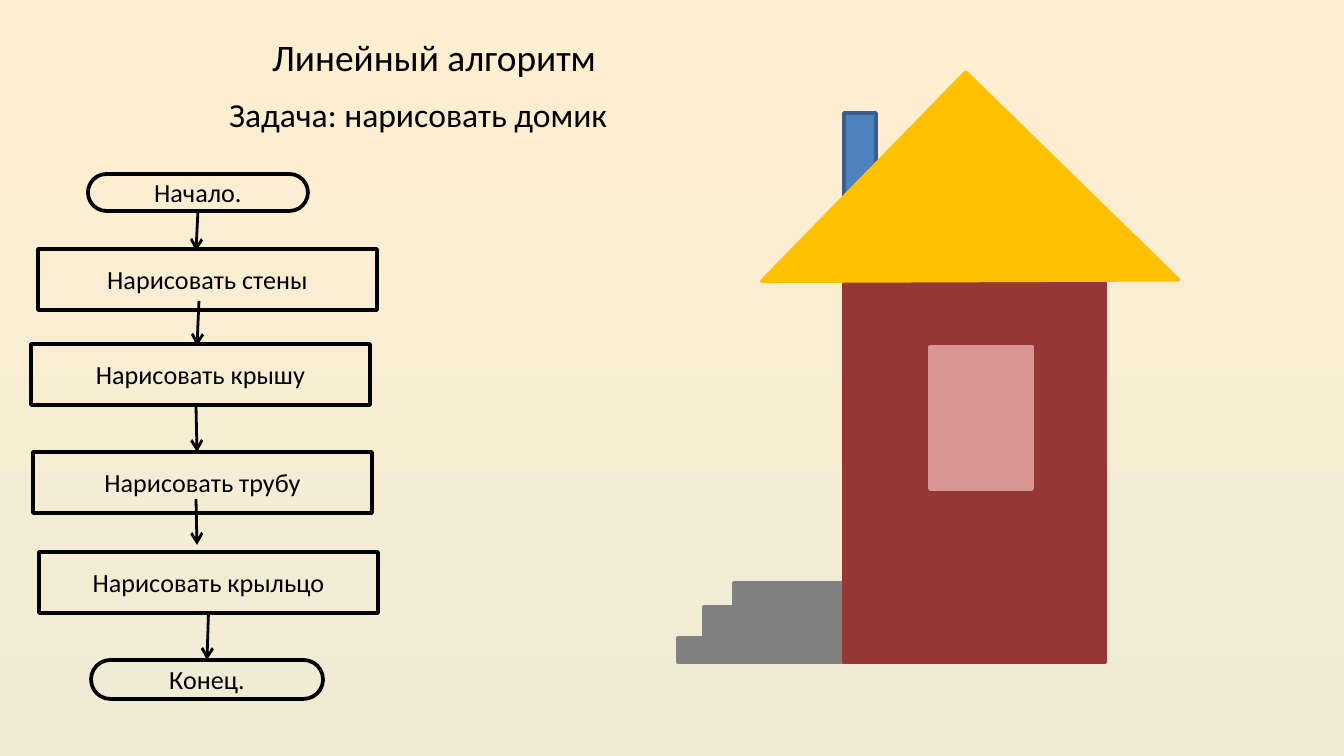
from pptx import Presentation
from pptx.util import Emu, Pt
from pptx.dml.color import RGBColor
from pptx.enum.shapes import MSO_SHAPE, MSO_CONNECTOR
from pptx.enum.text import MSO_ANCHOR, PP_ALIGN
from pptx.oxml.ns import qn
from lxml import etree

RECT = MSO_SHAPE.RECTANGLE
PILL = MSO_SHAPE.ROUNDED_RECTANGLE
ROOF = MSO_SHAPE.RIGHT_TRIANGLE
LINE = MSO_CONNECTOR.STRAIGHT
MIDDLE = MSO_ANCHOR.MIDDLE
LEFT, CENTER = PP_ALIGN.LEFT, PP_ALIGN.CENTER
BOTTOM, TOP = 2, 0

BLACK = RGBColor(0x00, 0x00, 0x00)
CREAM = RGBColor(0xFF, 0xEF, 0xD1)
SAND = RGBColor(0xF0, 0xEB, 0xD5)
BLUE = RGBColor(0x4F, 0x81, 0xBD)
NAVY = RGBColor(0x3A, 0x5F, 0x8C)
GRAY = RGBColor(0x80, 0x80, 0x80)
BRICK = RGBColor(0x95, 0x37, 0x35)
GOLD = RGBColor(0xFF, 0xC0, 0x00)
PINK = RGBColor(0xD9, 0x96, 0x94)

SCALE = 914400 / 134.4


def px(*vals):
    return [Emu(round(v * SCALE)) for v in vals]


def write(shape, text, size, align):
    frame = shape.text_frame
    frame.word_wrap = True
    para = frame.paragraphs[0]
    para.text = text
    para.alignment = align
    style = {"name": "Calibri", "size": Pt(size)}
    for key, val in style.items():
        setattr(para.runs[0].font, key, val)
    para.runs[0].font.color.rgb = BLACK


prs = Presentation()
prs.slide_width, prs.slide_height = px(1344, 756)
slide = prs.slides.add_slide(prs.slide_layouts[6])
shapes = slide.shapes

# Background
fill = slide.background.fill
fill.gradient()
fill.gradient_angle = 270
for stop, color, pos in zip(fill.gradient_stops, (CREAM, SAND), (0, 0.99)):
    stop.color.rgb = color
    stop.position = pos

# House: chimney, steps, wall, roof, window
house = [
    (RECT, (844, 113, 32, 85), 0, BLUE, NAVY),
    (RECT, (704, 607, 140, 30), 0, GRAY, GRAY),
    (RECT, (678, 638, 166, 24), 0, GRAY, GRAY),
    (RECT, (734, 583, 110, 25), 0, GRAY, GRAY),
    (RECT, (844, 279, 261, 383), 0, BRICK, BRICK),
    (ROOF, (824, 132, 292, 297), 134.3, GOLD, GOLD),
    (RECT, (910, 367, 142, 102), 90, PINK, PINK),
]
for kind, place, turn, inner, edge in house:
    part = shapes.add_shape(kind, *px(*place))
    part.shadow.inherit = False
    part.rotation = turn
    part.fill.solid()
    part.fill.fore_color.rgb = inner
    part.line.color.rgb = edge
    part.line.width = Pt(2)

# Headings
heads = [
    ("Линейный алгоритм", 20, (259, 28, 445, 59)),
    ("Задача: нарисовать домик", 18, (216, 87, 445, 54)),
]
for text, size, place in heads:
    write(shapes.add_textbox(*px(*place)), text, size, LEFT)

# Flowchart blocks
blocks = [
    ("Начало.", PILL, (88, 174, 220, 37)),
    ("Нарисовать стены", RECT, (38, 249, 339, 61)),
    ("Нарисовать крышу", RECT, (31, 344, 339, 61)),
    ("Нарисовать трубу", RECT, (33, 452, 339, 61)),
    ("Нарисовать крыльцо", RECT, (39, 552, 339, 61)),
    ("Конец.", PILL, (91, 660, 232, 39)),
]
flow = []
for text, kind, place in blocks:
    block = shapes.add_shape(kind, *px(*place))
    block.shadow.inherit = False
    block.fill.background()
    block.line.color.rgb = BLACK
    block.line.width = Pt(2)
    if kind == PILL:
        block.adjustments[0] = 0.5
    block.text_frame.vertical_anchor = MIDDLE
    write(block, text, 14, CENTER)
    flow.append(block)

# Arrows: ends, then the blocks joined at start and end
arrows = [
    ((198, 211, 196, 251), flow[0], None),
    ((199, 301, 197, 346), None, None),
    ((196, 406, 197, 452), None, None),
    ((196, 499, 197, 545), None, None),
    ((208, 613, 207, 660), flow[4], flow[5]),
]
for ends, start, stop in arrows:
    arrow = shapes.add_connector(LINE, *px(*ends))
    if start:
        arrow.begin_connect(start, BOTTOM)
    if stop:
        arrow.end_connect(stop, TOP)
    arrow.line.color.rgb = BLACK
    arrow.line.width = Pt(1.5)
    props = arrow._element.spPr
    etree.SubElement(props.find(qn("a:ln")), qn("a:tailEnd"), type="arrow")
    etree.SubElement(props, qn("a:effectLst"))

prs.save("out.pptx")
